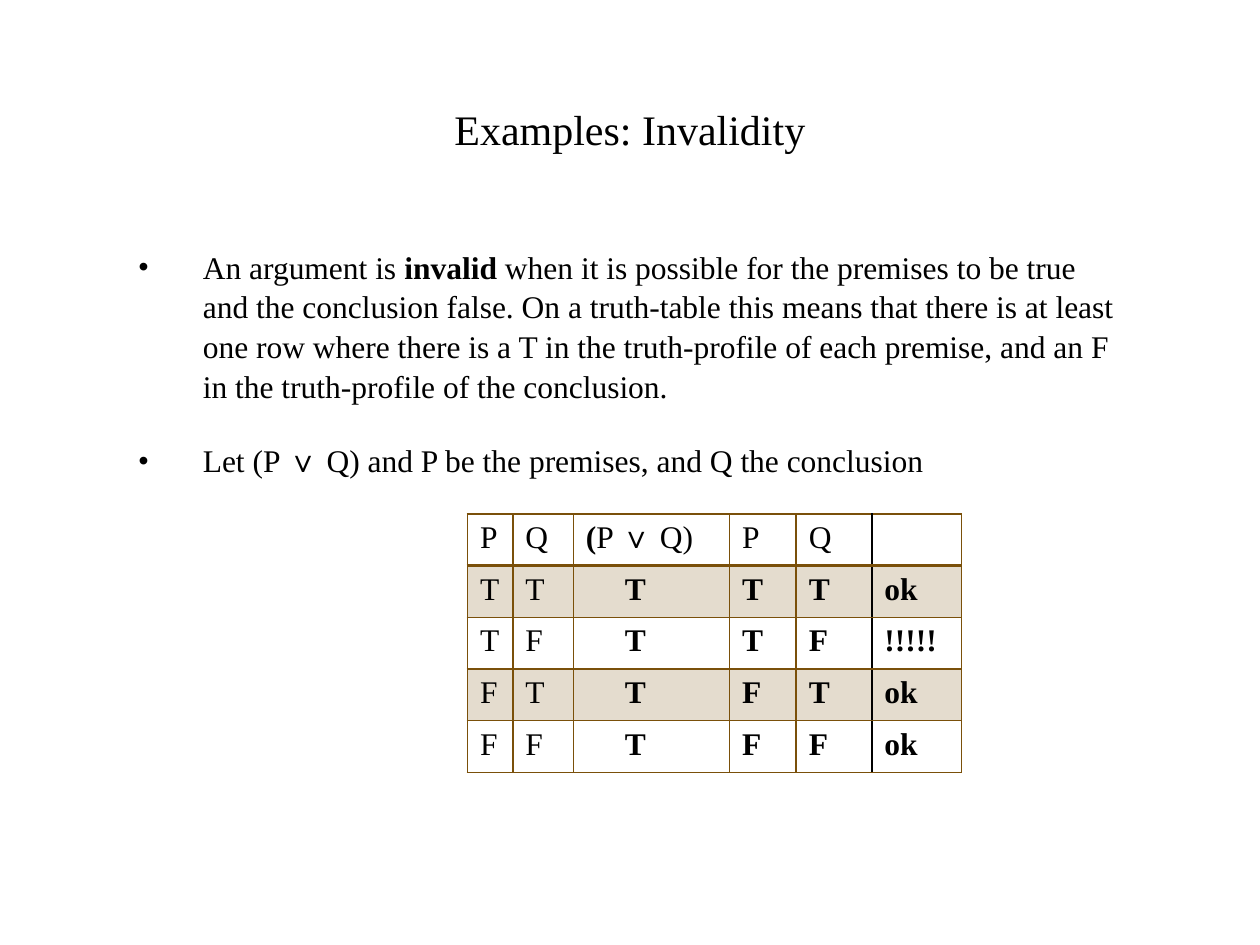
from lxml.etree import SubElement
from pptx import Presentation
from pptx.dml.color import RGBColor
from pptx.enum.text import MSO_ANCHOR, MSO_AUTO_SIZE, PP_ALIGN
from pptx.oxml.ns import qn
from pptx.util import Inches, Pt

BLACK = RGBColor(0x00, 0x00, 0x00)
BROWN = RGBColor(0x7A, 0x50, 0x0A)
FONT = "Times New Roman"

TITLE = "Examples: Invalidity"
BULLETS = [
    [("An argument is ", False), ("invalid ", True),
     ("when it is possible for the premises to be true and the conclusion false. "
      "On a truth-table this means that there is at least one row where there is a T "
      "in the truth-profile of each premise, and an F in the truth-profile of the "
      "conclusion.", False)],
    [("Let (P ∨ Q) and P be the premises, and Q the conclusion", False)],
]
HEADER = [[("P", False)], [("Q", False)],
          [("(", True), ("P ", False), ("∨ ", True), ("Q)", False)],
          [("P", False)], [("Q", False)], []]
TRUTH_ROWS = ["T T T T T ok", "T F T T F !!!!!", "F T T F T ok", "F F T F F ok"]
COLUMN_WIDTHS = [0.36, 0.48, 1.24, 0.53, 0.6, 0.71]
ROW_HEIGHT = 0.41
INPUT_COLUMNS = 2
DISJUNCTION_COLUMN = 2
VERDICT_COLUMN = 5


def set_indent(paragraph, left, first=0):
    properties = paragraph._p.get_or_add_pPr()
    properties.set("marL", str(Inches(left)))
    properties.set("indent", str(Inches(first)))
    return properties


def add_bullet(paragraph):
    properties = set_indent(paragraph, 0.51, -0.51)
    SubElement(properties, qn("a:buSzPct"), val="90000")
    SubElement(properties, qn("a:buChar"), char="•")


def add_border(cell, side, color, width):
    line = SubElement(cell._tc.get_or_add_tcPr(), qn(f"a:ln{side}"), w=str(Pt(width)))
    fill = SubElement(line, qn("a:solidFill"))
    SubElement(fill, qn("a:srgbClr"), val=str(color))


def shade(cell):
    """Fill the cell with brown at 20% opacity."""
    cell.fill.solid()
    cell.fill.fore_color.rgb = BROWN
    color = cell._tc.tcPr.find(f"{qn('a:solidFill')}/{qn('a:srgbClr')}")
    SubElement(color, qn("a:alpha"), val="20000")


class SlideBuilder:
    def __init__(self, slide, font=FONT, color=BLACK):
        self.slide = slide
        self.font = font
        self.color = color

    def add_runs(self, paragraph, runs, size=18):
        for text, bold in runs:
            run = paragraph.add_run()
            run.text = text
            run.font.name = self.font
            run.font.size = Pt(size)
            run.font.bold = bold
            run.font.color.rgb = self.color

    def place(self, shape, left, top, width, height, anchor):
        shape.left, shape.top = Inches(left), Inches(top)
        shape.width, shape.height = Inches(width), Inches(height)
        frame = shape.text_frame
        frame.auto_size = MSO_AUTO_SIZE.NONE
        frame.vertical_anchor = anchor
        return frame

    def title(self, text):
        frame = self.place(self.slide.shapes.title, 1, 0.55, 8, 0.95, MSO_ANCHOR.MIDDLE)
        paragraph = frame.paragraphs[0]
        paragraph.alignment = PP_ALIGN.CENTER
        self.add_runs(paragraph, [(text, False)], size=24)

    def bullets(self, items):
        frame = self.place(self.slide.placeholders[1], 1, 1.9, 8, 4.44, MSO_ANCHOR.TOP)
        for index, runs in enumerate(items):
            paragraph = frame.add_paragraph() if index else frame.paragraphs[0]
            add_bullet(paragraph)
            paragraph.space_before = Pt(20 if index else 0)
            paragraph.line_spacing = 1.05
            self.add_runs(paragraph, runs)

    def cell(self, cell, runs, row, column):
        left = BLACK if column == VERDICT_COLUMN else BROWN
        right = BLACK if column == VERDICT_COLUMN - 1 else BROWN
        add_border(cell, "L", left, 1)
        add_border(cell, "R", right, 1)
        add_border(cell, "T", BROWN, 2 if row == 1 else 1)
        add_border(cell, "B", BROWN, 2 if row == 0 else 1)
        if row % 2:
            shade(cell)
        else:
            cell.fill.background()
        paragraph = cell.text_frame.paragraphs[0]
        if row and column == DISJUNCTION_COLUMN:
            set_indent(paragraph, 0.31)
        self.add_runs(paragraph, runs)

    def truth_table(self, header, truth_rows):
        rows = [header] + [
            [[(value, column >= INPUT_COLUMNS)] for column, value in enumerate(line.split())]
            for line in truth_rows]
        frame = self.slide.shapes.add_table(
            len(rows), len(COLUMN_WIDTHS), Inches(3.71), Inches(4.08),
            Inches(sum(COLUMN_WIDTHS)), Inches(ROW_HEIGHT * len(rows)))
        table = frame.table
        table.first_row = table.horz_banding = False
        for column, width in zip(table.columns, COLUMN_WIDTHS):
            column.width = Inches(width)
        for row_index, row in enumerate(rows):
            table.rows[row_index].height = Inches(ROW_HEIGHT)
            for column_index, runs in enumerate(row):
                self.cell(table.cell(row_index, column_index), runs, row_index, column_index)


def main():
    presentation = Presentation()
    presentation.slide_width, presentation.slide_height = Inches(10), Inches(7.5)
    builder = SlideBuilder(presentation.slides.add_slide(presentation.slide_layouts[1]))
    builder.title(TITLE)
    builder.bullets(BULLETS)
    builder.truth_table(HEADER, TRUTH_ROWS)
    presentation.save("out.pptx")


if __name__ == "__main__":
    main()
